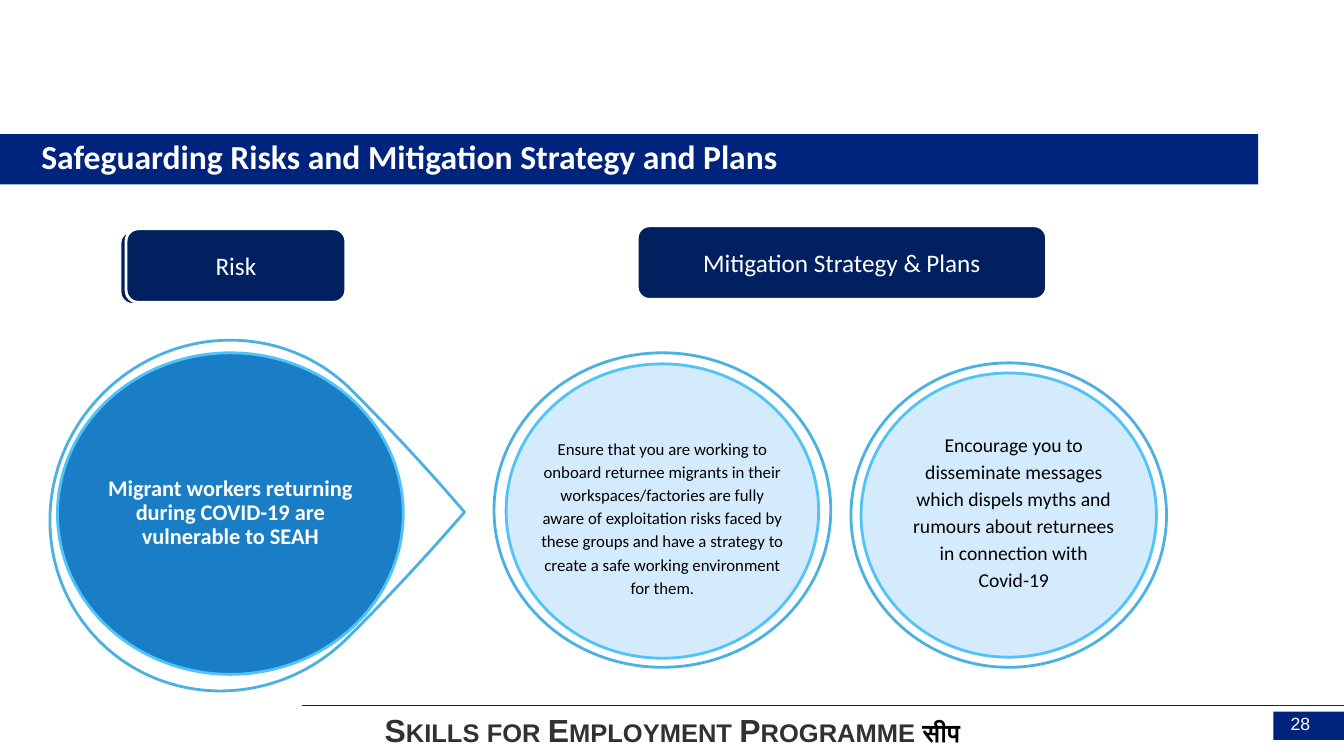
from pptx import Presentation
from pptx.dml.color import RGBColor
from pptx.enum.shapes import MSO_CONNECTOR, MSO_SHAPE
from pptx.enum.text import MSO_ANCHOR, PP_ALIGN
from pptx.oxml.ns import qn
from pptx.util import Inches, Pt
from lxml import etree

OVAL, TEAR = MSO_SHAPE.OVAL, MSO_SHAPE.TEAR
BAR, ROUNDED = MSO_SHAPE.RECTANGLE, MSO_SHAPE.ROUNDED_RECTANGLE
MIDDLE, BOTTOM, TOP = MSO_ANCHOR.MIDDLE, MSO_ANCHOR.BOTTOM, MSO_ANCHOR.TOP
CENTER, LEFT = PP_ALIGN.CENTER, PP_ALIGN.LEFT

COLORS = {"bar": "00247D", "label": "002060", "white": "FFFFFF", "black": "000000",
          "ring": "4AB1E2", "edge": "51C3F9", "risk": "0070C0", "plan": "D0E9FD",
          "footer": "323132"}

TITLE = "Safeguarding Risks and Mitigation Strategy and Plans"
PROGRAMME, PROGRAMME_SHORT = "Skills for Employment Programme ", "सीप"
PAGE_NUMBER = "28"
BARS = [(-0.02, 1.33, 12.5, 0.5), (12.63, 7.06, 0.72, 0.28)]
LABELS = [
    ("", (1.19, 2.29, 2.18, 0.73)),
    ("Mitigation Strategy & Plans", (6.32, 2.24, 4.06, 0.73)),
    ("Risk", (1.25, 2.27, 2.18, 0.73)),
]
CIRCLES = [
    dict(ring=(4.9, 3.5, 3.34, 3.12), disc=(5.02, 3.61, 3.1, 2.92), area=(5.33, 4.24, 2.48, 1.77),
         fill="plan", size=12, color="black", bold=False, spacing=1.15, outline=OVAL,
         text="Ensure that you are working to onboard returnee migrants in their "
              "workspaces/factories are fully aware of exploitation risks faced by these groups "
              "and have a strategy to create a safe working environment for them."),
    dict(ring=(0.52, 3.35, 3.43, 3.53), disc=(0.57, 3.5, 3.43, 3.19), area=(1, 3.93, 2.57, 2.33),
         fill="risk", size=16, color="white", bold=True, spacing=0.9, outline=TEAR,
         text="Migrant workers returning during COVID-19 are vulnerable to SEAH"),
    dict(ring=(8.44, 3.6, 3.13, 3.02), disc=(8.54, 3.7, 2.93, 2.82), area=(9.01, 4.28, 2.09, 1.57),
         fill="plan", size=14, color="black", bold=False, spacing=1.15, outline=OVAL,
         text="Encourage you to disseminate messages which dispels myths and rumours about "
              "returnees in connection with Covid-19"),
]


def rgb(name):
    return RGBColor.from_string(COLORS[name])


def lengths(frame):
    return [Inches(value) for value in frame]


def style_font(font, size, color, bold=False, name="Calibri"):
    font.size, font.bold, font.name = Pt(size), bold, name
    font.color.rgb = rgb(color)


def add_filled(page, kind, frame, fill, line=None, opacity=100):
    shape = page.shapes.add_shape(kind, *lengths(frame))
    shape.shadow.inherit = False
    shape.fill.solid()
    shape.fill.fore_color.rgb = rgb(fill)
    if opacity < 100:
        color = shape.element.spPr.find(qn("a:solidFill"))[0]
        etree.SubElement(color, qn("a:alpha")).set("val", str(opacity * 1000))
    if line:
        shape.line.color.rgb = rgb(line)
        shape.line.width = Pt(2)
    else:
        shape.line.fill.background()
    return shape


def set_frame(frame, anchor, side, edge):
    frame.word_wrap = True
    frame.vertical_anchor = anchor
    frame.margin_left = frame.margin_right = Inches(side)
    frame.margin_top = frame.margin_bottom = Inches(edge)


def add_text_box(page, area, anchor, align, side, edge):
    box = page.shapes.add_textbox(*lengths(area))
    set_frame(box.text_frame, anchor, side, edge)
    para = box.text_frame.paragraphs[0]
    para.alignment = align
    return para


def add_footer(page):
    rule = page.shapes.add_connector(MSO_CONNECTOR.STRAIGHT, *lengths((3, 7, 13.33, 7)))
    rule.line.color.rgb = rgb("bar")
    rule.line.width = Pt(0.75)
    etree.SubElement(rule.element.spPr, qn("a:effectLst"))
    for frame in BARS:
        add_filled(page, BAR, frame, "bar")
    para = add_text_box(page, (12.67, 7, 0.66, 0.34), TOP, LEFT, 0.13, 0.07)
    para.text = PAGE_NUMBER
    style_font(para.font, 12.6, "white", name="Arial")
    para = add_text_box(page, (2.82, 7.02, 7.7, 0.48), BOTTOM, CENTER, 0.13, 0.07)
    for text, size, color, caps in [(PROGRAMME, 22.8, "footer", "small"),
                                    (PROGRAMME_SHORT, 18.1, "black", "none")]:
        span = para.add_run()
        span.text = text
        style_font(span.font, size, color, True, "Arial")
        span.font._element.set("cap", caps)


def add_title(page):
    title = page.shapes.title
    title.left, title.top, title.width, title.height = lengths((0.3, 1.26, 11.82, 0.55))
    set_frame(title.text_frame, BOTTOM, 0.11, 0.06)
    para = title.text_frame.paragraphs[0]
    para.text = TITLE
    para.alignment = LEFT
    style_font(para.font, 24, "white", True)
    title.element.getparent().append(title.element)


def add_circle(page, circle):
    ring = add_filled(page, circle["outline"], circle["ring"], "white", "ring")
    if circle["outline"] == TEAR:
        ring.adjustments[0] = 0.964
        ring.rotation = 45
    add_filled(page, OVAL, circle["disc"], circle["fill"], "edge", 90)
    para = add_text_box(page, circle["area"], MIDDLE, CENTER, 0.02, 0.02)
    para.text = circle["text"]
    para.line_spacing = circle["spacing"]
    style_font(para.font, circle["size"], circle["color"], circle["bold"])


def add_label(page, text, frame):
    label = add_filled(page, ROUNDED, frame, "label", "white")
    if text:
        set_frame(label.text_frame, MIDDLE, 0.1, 0.05)
        para = label.text_frame.paragraphs[0]
        para.text = text
        para.alignment = CENTER
        style_font(para.font, 18, "white")


def main():
    deck = Presentation()
    deck.slide_width, deck.slide_height = lengths((13.33, 7.5))
    page = deck.slides.add_slide(deck.slide_layouts[5])
    add_footer(page)
    add_title(page)
    for circle in CIRCLES:
        add_circle(page, circle)
    for text, frame in LABELS:
        add_label(page, text, frame)
    deck.save("out.pptx")


if __name__ == "__main__":
    main()
